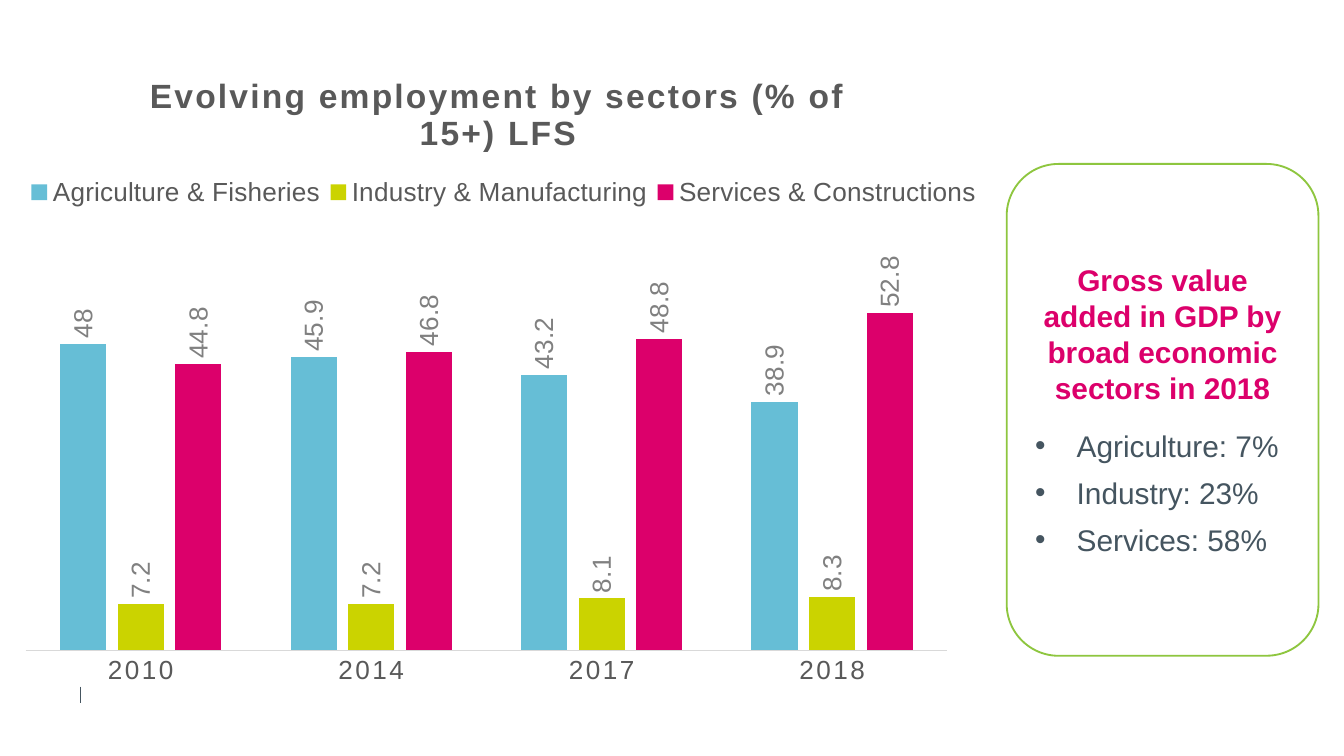
from pptx import Presentation
from pptx.chart.data import CategoryChartData
from pptx.dml.color import RGBColor
from pptx.enum.chart import XL_CHART_TYPE as ChartType, XL_LEGEND_POSITION as LegendPosition
from pptx.enum.chart import XL_LABEL_POSITION as LabelPosition, XL_TICK_MARK as TickMark
from pptx.enum.shapes import MSO_CONNECTOR as Connector, MSO_SHAPE as Shape
from pptx.enum.text import MSO_ANCHOR as Anchor, PP_ALIGN as Align
from pptx.oxml.ns import qn
from pptx.util import Inches, Pt
from lxml.etree import SubElement

COLORS = {"blue": "66BED6", "lime": "CBD300", "pink": "DC006B", "green": "8EC63F",
          "slate": "455560", "text": "595959", "label": "808080", "axis": "D9D9D9",
          "white": "FFFFFF"}
FONT = "Arial"
CHART_WIDTH, CHART_HEIGHT = 7.18, 4.75


def style_font(font, size, color, bold=False):
    font.name, font.size, font.bold = FONT, Pt(size), bold
    font.color.rgb = RGBColor.from_string(COLORS[color])


def set_layout(element, index, inner=False, **inches):
    """Place a chart part by inches from the chart's top left corner."""
    for old in element.findall(qn("c:layout")):
        element.remove(old)
    layout = SubElement(element, qn("c:layout"))
    manual = SubElement(layout, qn("c:manualLayout"))
    if inner:
        SubElement(manual, qn("c:layoutTarget"), val="inner")
    for mode in ("xMode", "yMode"):
        SubElement(manual, qn(f"c:{mode}"), val="edge")
    for name, length in inches.items():
        share = length / (CHART_WIDTH if name in "xw" else CHART_HEIGHT)
        SubElement(manual, qn(f"c:{name}"), val=f"{share:.4f}")
    element.insert(index, layout)


presentation = Presentation()
presentation.slide_width = Inches(10)
presentation.slide_height = presentation.slide_width * 9 // 16
slide = presentation.slides.add_slide(presentation.slide_layouts[6])

# Footer tick
tick = slide.shapes.add_connector(Connector.STRAIGHT, Inches(0.6), Inches(5.11),
                                  Inches(0.6), Inches(5.23))
tick.line.color.rgb = RGBColor.from_string(COLORS["slate"])
tick.line.width = Pt(0.25)
SubElement(tick.element.spPr, qn("a:effectLst"))

# Gross value added panel
panel = slide.shapes.add_shape(Shape.FLOWCHART_ALTERNATE_PROCESS, Inches(7.49), Inches(1.22),
                               Inches(2.32), Inches(3.66))
panel.shadow.inherit = False
panel.fill.solid()
panel.fill.fore_color.rgb = RGBColor.from_string(COLORS["white"])
panel.line.color.rgb = RGBColor.from_string(COLORS["green"])
panel.line.width = Pt(1)
frame = panel.text_frame
frame.word_wrap = True
frame.vertical_anchor = Anchor.MIDDLE

heading = frame.paragraphs[0]
heading.alignment, heading.space_after = Align.CENTER, Pt(12)
run = heading.add_run()
run.text = "Gross value added in GDP by broad economic sectors in 2018"
style_font(run.font, 16, "pink", bold=True)

for sector_share in ("Agriculture: 7%", "Industry: 23%", "Services: 58%"):
    paragraph = frame.add_paragraph()
    paragraph.alignment, paragraph.space_after = Align.LEFT, Pt(6)
    properties = paragraph._p.get_or_add_pPr()
    properties.set("marL", str(Inches(0.31)))
    properties.set("indent", str(Inches(-0.31)))
    SubElement(properties, qn("a:buFont"), typeface=FONT)
    SubElement(properties, qn("a:buChar"), char="•")
    run = paragraph.add_run()
    run.text = sector_share
    style_font(run.font, 16, "slate")

# Employment chart
sectors = [("Agriculture & Fisheries", "blue", (48, 45.9, 43.2, 38.9)),
           ("Industry & Manufacturing", "lime", (7.2, 7.2, 8.1, 8.3)),
           ("Services & Constructions", "pink", (44.8, 46.8, 48.8, 52.8))]
data = CategoryChartData()
data.categories = ["2010", "2014", "2017", "2018"]
for name, color, values in sectors:
    data.add_series(name, values)
chart = slide.shapes.add_chart(ChartType.COLUMN_CLUSTERED, Inches(0.16), Inches(0.5),
                               Inches(CHART_WIDTH), Inches(CHART_HEIGHT), data).chart
chart.font.name, chart.font.size = FONT, Pt(10)

title = chart.chart_title.text_frame.paragraphs[0]
run = title.add_run()
run.text = "Evolving employment by sectors (% of 15+) LFS"
style_font(run.font, 18, "text", bold=True)
run.font._element.set("spc", "120")

chart.has_legend = True
chart.legend.position = LegendPosition.TOP
chart.legend.include_in_layout = False
style_font(chart.legend.font, 14, "text")

value_axis, category_axis = chart.value_axis, chart.category_axis
value_axis.minimum_scale, value_axis.maximum_scale = 0, 60
value_axis.has_major_gridlines = False
value_axis.visible = False
category_axis.major_tick_mark = category_axis.minor_tick_mark = TickMark.NONE
category_axis.format.line.color.rgb = RGBColor.from_string(COLORS["axis"])
category_axis.format.line.width = Pt(0.75)
style_font(category_axis.tick_labels.font, 14, "text")
for properties in chart.element.xpath(".//c:catAx/c:txPr//a:defRPr"):
    properties.set("spc", "120")

plot = chart.plots[0]
plot.gap_width, plot.overlap, plot.vary_by_categories = 150, -25, False
for series, (name, color, values) in zip(plot.series, sectors):
    series.format.fill.solid()
    series.format.fill.fore_color.rgb = RGBColor.from_string(COLORS[color])
    labels = series.data_labels
    labels.show_value = True
    labels.position = LabelPosition.OUTSIDE_END
    style_font(labels.font, 14, "label")
for body in chart.element.xpath(".//c:dLbls/c:txPr/a:bodyPr"):
    body.set("rot", "-5400000")
    body.set("vert", "horz")

set_layout(chart.element.xpath(".//c:title")[0], 1, x=0.91, y=-0.03)
set_layout(chart.element.xpath(".//c:legend")[0], 1, x=0, y=0.78, w=7.18, h=0.3)
set_layout(chart.element.xpath(".//c:plotArea")[0], 0, inner=True, x=0.03, y=1.49, w=6.86, h=2.85)

presentation.save("out.pptx")
